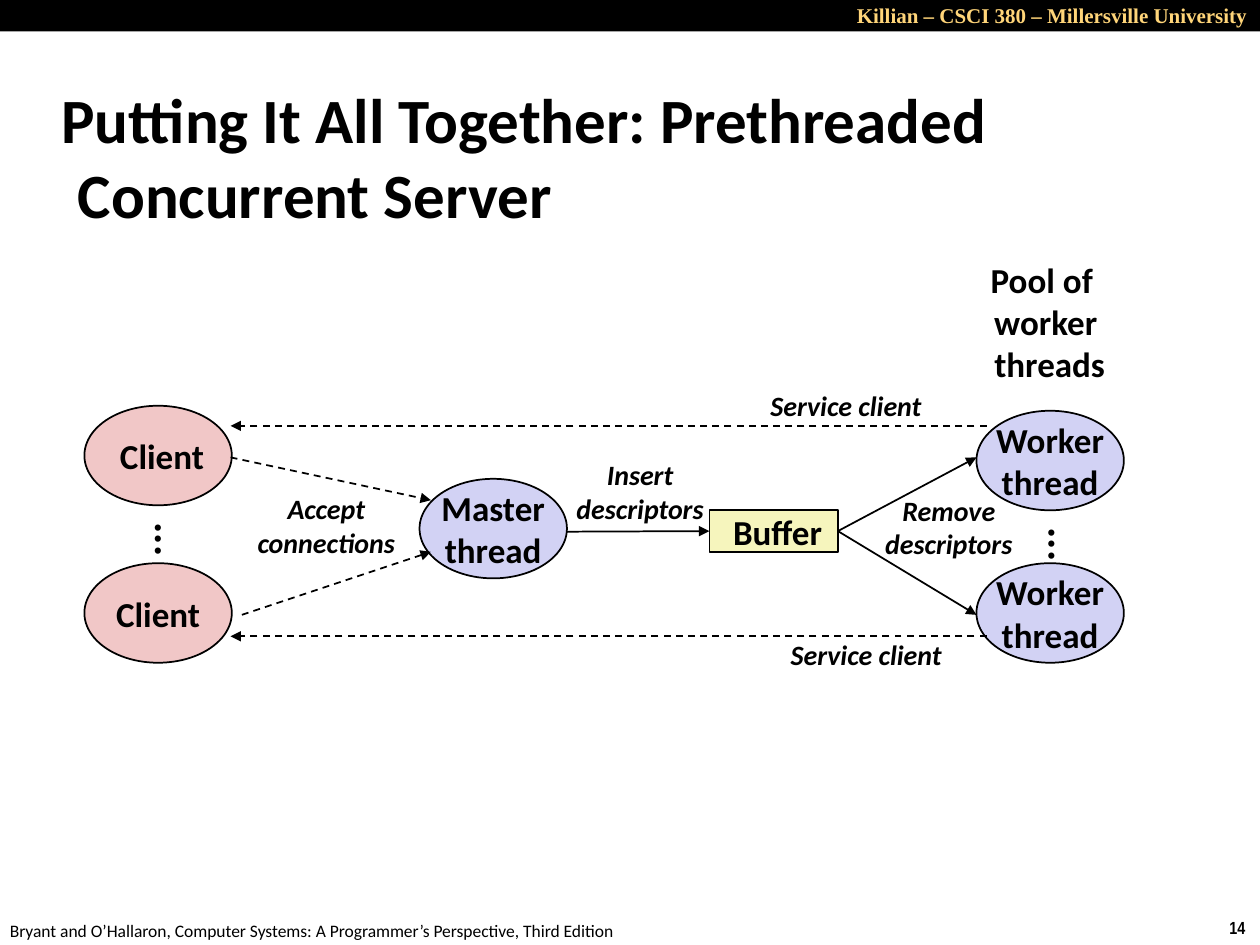
from dataclasses import dataclass

from lxml import etree
from pptx import Presentation
from pptx.dml.color import RGBColor
from pptx.enum.dml import MSO_LINE
from pptx.enum.shapes import MSO_CONNECTOR, MSO_SHAPE
from pptx.enum.text import MSO_ANCHOR, MSO_AUTO_SIZE, PP_ALIGN
from pptx.oxml.ns import qn
from pptx.util import Inches, Pt

LEFT, CENTER, RIGHT = PP_ALIGN.LEFT, PP_ALIGN.CENTER, PP_ALIGN.RIGHT
TOP, MIDDLE = MSO_ANCHOR.TOP, MSO_ANCHOR.MIDDLE
FIT, FIXED = MSO_AUTO_SIZE.SHAPE_TO_FIT_TEXT, MSO_AUTO_SIZE.NONE
OVAL, RECT = MSO_SHAPE.OVAL, MSO_SHAPE.RECTANGLE
STRAIGHT, DASH = MSO_CONNECTOR.STRAIGHT, MSO_LINE.DASH
SIDE_LEFT, SIDE_RIGHT = 1, 3


@dataclass(frozen=True)
class Theme:
    body: str = "Calibri"
    narrow: str = "Arial Narrow"
    serif: str = "Times New Roman"
    black: str = "000000"
    gold: str = "FFD579"
    thread: str = "D2D2F4"
    client: str = "F1C7C7"
    buffer: str = "F6F5BD"
    title_size: int = 36
    dots_size: int = 24
    node_size: int = 20
    label_size: int = 16
    header_size: int = 12
    footer_size: int = 10
    line_width: int = 1


class SlideBuilder:
    def __init__(self, slide, theme):
        self.s = slide
        self.theme = theme

    def add_lines(self, tf, lines, size, align=CENTER, font=None, color=None,
                  bold=True, italic=False):
        for i, line in enumerate(lines):
            p = tf.paragraphs[0] if i == 0 else tf.add_paragraph()
            p.alignment = align
            r = p.add_run()
            r.text = line
            r.font.name = font or self.theme.body
            r.font.size = Pt(size)
            r.font.bold = bold
            r.font.italic = italic
            r.font.color.rgb = RGBColor.from_string(color or self.theme.black)

    def text(self, box, lines, size, anchor=MIDDLE, wrap=False, **style):
        sp = self.s.shapes.add_textbox(*map(Inches, box))
        tf = sp.text_frame
        tf.word_wrap = wrap
        tf.auto_size = FIXED if wrap else FIT
        tf.vertical_anchor = anchor
        self.add_lines(tf, lines, size, **style)
        return tf

    def title(self, box, line):
        tf = self.text(box, [line], self.theme.title_size, wrap=True, align=LEFT)
        # Hanging first line
        pPr = tf.paragraphs[0]._p.get_or_add_pPr()
        pPr.set("marL", str(Inches(0.13)))
        pPr.set("indent", str(Inches(-0.13)))

    def label(self, box, *lines):
        self.text(box, lines, self.theme.label_size, italic=True)

    def dots(self, box, align):
        tf = self.text(box, ["..."], self.theme.dots_size, align=align)
        tf._txBody.find(qn("a:bodyPr")).set("vert", "eaVert")

    def shape(self, kind, box, fill, outlined=True):
        sp = self.s.shapes.add_shape(kind, *map(Inches, box))
        sp.shadow.inherit = False
        sp.fill.solid()
        sp.fill.fore_color.rgb = RGBColor.from_string(fill)
        if outlined:
            sp.line.color.rgb = RGBColor.from_string(self.theme.black)
            sp.line.width = Pt(self.theme.line_width)
        else:
            sp.line.fill.background()
        return sp

    def node(self, kind, box, fill, *lines):
        sp = self.shape(kind, box, fill)
        tf = sp.text_frame
        tf.word_wrap = False
        tf.vertical_anchor = MIDDLE
        tf.margin_left = tf.margin_right = Inches(0.1)
        tf.margin_top = tf.margin_bottom = 0
        self.add_lines(tf, lines, self.theme.node_size)
        return sp

    def oval(self, left, top, fill, *lines):
        return self.node(OVAL, (left, top, 1.17, 0.79), fill, *lines)

    def arrow(self, start, end, dashed=False):
        c = self.s.shapes.add_connector(STRAIGHT, *map(Inches, (*start, *end)))
        c.line.color.rgb = RGBColor.from_string(self.theme.black)
        c.line.width = Pt(self.theme.line_width)
        if dashed:
            c.line.dash_style = DASH
        ln = c.line._get_or_add_ln()
        etree.SubElement(ln, qn("a:tailEnd"), type="triangle")
        etree.SubElement(c._element.spPr, qn("a:effectLst"))
        return c


def main():
    prs = Presentation()
    prs.slide_width, prs.slide_height = Inches(10), Inches(7.5)
    t = Theme()
    b = SlideBuilder(prs.slides.add_slide(prs.slide_layouts[6]), t)

    # Footer and header bar
    b.text((9.66, 7.23, 0.34, 0.27), ["14"], t.footer_size, anchor=TOP,
           align=LEFT, font=t.narrow)
    b.text((-0.02, 7.25, 5.08, 0.27),
           ["Bryant and O’Hallaron, Computer Systems: "
            "A Programmer’s Perspective, Third Edition"],
           t.footer_size, anchor=TOP, align=LEFT, bold=False)
    b.shape(RECT, (0, 0, 10, 0.25), t.black, outlined=False)
    b.text((4.5, -0.03, 5.5, 0.3),
           ["Killian – CSCI 380 – Millersville University"], t.header_size,
           anchor=TOP, wrap=True, align=RIGHT, font=t.serif, color=t.gold)

    b.title((0.39, 0.64, 9.36, 1.19),
            "Putting It All Together: Prethreaded Concurrent Server")

    # Master thread and buffer
    b.oval(3.33, 3.8, t.thread, "Master", "thread")
    buffer = b.node(RECT, (5.63, 4.05, 1.02, 0.33), t.buffer, " Buffer")
    insert = b.arrow((4.5, 4.22), (5.63, 4.22))
    insert.end_connect(buffer, SIDE_LEFT)

    # Worker pool, fed from the buffer
    for worker_y, arrow_y in ((3.26, 3.63), (4.47, 4.88)):
        remove = b.arrow((6.65, 4.22), (7.75, arrow_y))
        remove.begin_connect(buffer, SIDE_RIGHT)
        b.oval(7.75, worker_y, t.thread, "Worker", "thread")
    b.dots((8.15, 4.09, 0.61, 0.37), LEFT)
    b.text((7.72, 2, 1.16, 1.11), ["Pool of ", "worker", " threads"],
           t.node_size)

    # Clients and their connections
    b.oval(0.67, 3.22, t.client, " Client")
    b.oval(0.67, 4.47, t.client, "Client")
    b.dots((1.06, 4.05, 0.61, 0.37), CENTER)
    b.arrow((1.83, 3.63), (3.42, 3.97), dashed=True)
    b.arrow((1.92, 4.88), (3.42, 4.38), dashed=True)

    # Replies from workers to clients
    for y in (3.38, 5.05):
        b.arrow((7.83, y), (1.83, y), dashed=True)

    # Step labels
    b.label((1.91, 3.85, 1.36, 0.64), "Accept", "connections")
    b.label((4.44, 3.58, 1.28, 0.64), "Insert", "descriptors")
    b.label((6.89, 3.86, 1.28, 0.64), "Remove", "descriptors")
    b.label((5.98, 3.03, 1.47, 0.37), "Service client")
    b.label((6.14, 5.01, 1.47, 0.37), "Service client")

    prs.save("out.pptx")


if __name__ == "__main__":
    main()
